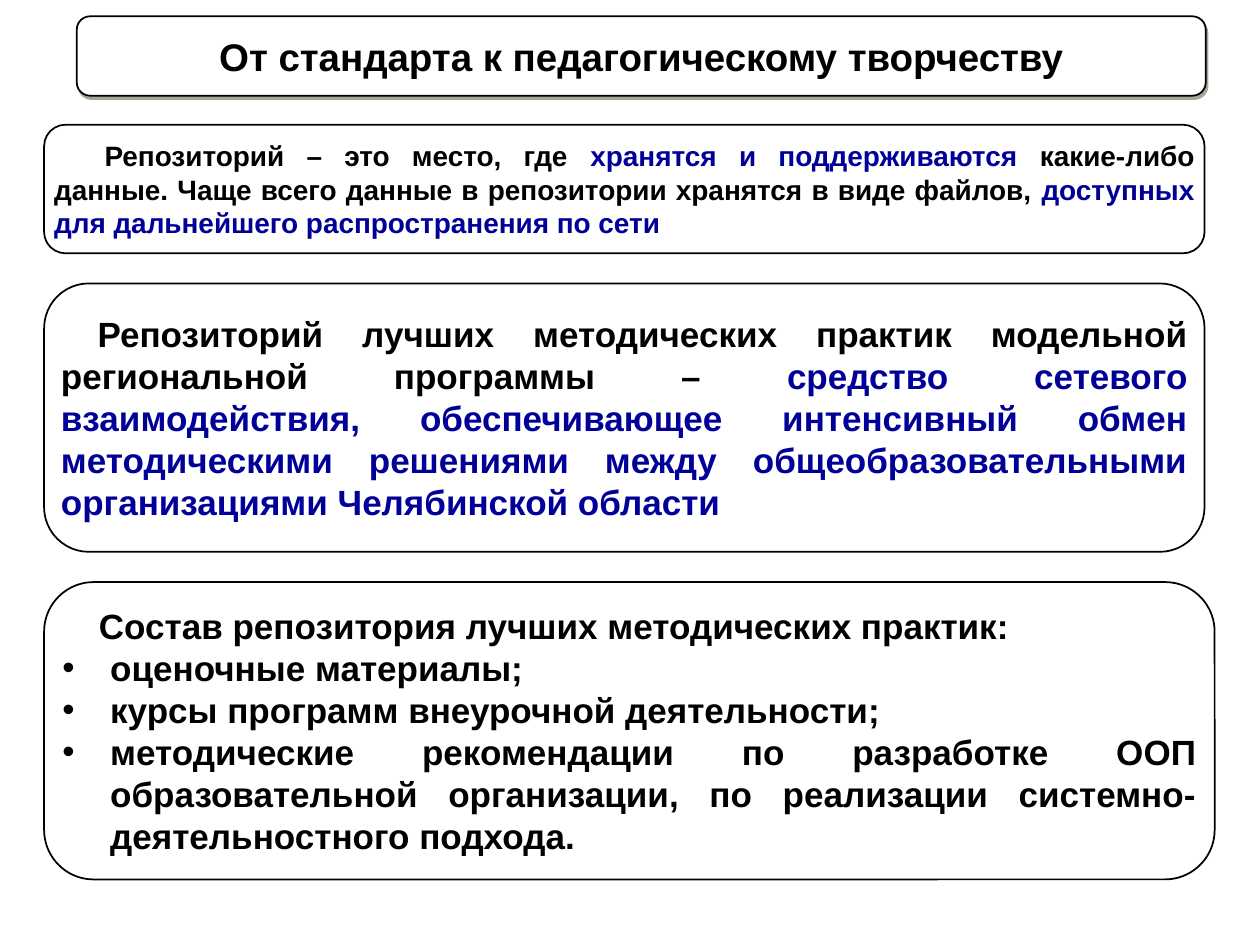
from lxml.etree import SubElement
from pptx import Presentation
from pptx.dml.color import RGBColor
from pptx.enum.shapes import MSO_SHAPE
from pptx.enum.text import MSO_ANCHOR, MSO_AUTO_SIZE, PP_ALIGN
from pptx.oxml import parse_xml
from pptx.oxml.ns import nsdecls, qn
from pptx.util import Inches, Pt

BLACK, BLUE, WHITE = "000000", "000099", "FFFFFF"


def write(shape, paragraphs, size, align=PP_ALIGN.JUSTIFY, inset=0.03):
    """Each paragraph is (left margin, first-line indent, bullet, runs)."""
    tf = shape.text_frame
    tf.word_wrap = True
    tf.auto_size = MSO_AUTO_SIZE.NONE
    tf.vertical_anchor = MSO_ANCHOR.MIDDLE
    tf.margin_left = tf.margin_right = Inches(inset)
    tf.margin_top = tf.margin_bottom = Inches(0.03)
    for i, (margin, indent, bullet, runs) in enumerate(paragraphs):
        p = tf.add_paragraph() if i else tf.paragraphs[0]
        p.alignment = align
        pPr = p._p.get_or_add_pPr()
        pPr.set("marL", str(Inches(margin)))
        pPr.set("indent", str(Inches(indent)))
        if bullet:
            SubElement(pPr, qn("a:buFont"), typeface="Arial")
            SubElement(pPr, qn("a:buChar"), char=bullet)
        for text, color in runs:
            r = p.add_run()
            r.text = text
            r.font.name, r.font.size, r.font.bold = "Arial", Pt(size), True
            r.font.color.rgb = RGBColor.from_string(color)


def add_box(kind, left, top, width, height):
    box = s.shapes.add_shape(kind, Inches(left), Inches(top), Inches(width), Inches(height))
    box.shadow.inherit = False
    box.fill.solid()
    box.fill.fore_color.rgb = RGBColor.from_string(WHITE)
    box.line.color.rgb = RGBColor.from_string(BLACK)
    box.line.width = Pt(1)
    return box


prs = Presentation()
prs.slide_width, prs.slide_height = Inches(10), Inches(7.5)
s = prs.slides.add_slide(prs.slide_layouts[5])

# Title frame with its shadow
frame = add_box(MSO_SHAPE.FLOWCHART_ALTERNATE_PROCESS, 0.61, 0.13, 8.96, 0.63)
frame.shadow.inherit = True
frame.element.spPr.append(parse_xml(
    f'<a:effectLst {nsdecls("a")}>'
    f'<a:outerShdw dist="{Pt(2.2)}" dir="{63 * 60000}" algn="ctr" rotWithShape="0">'
    '<a:srgbClr val="524A37"><a:alpha val="50000"/></a:srgbClr>'
    '</a:outerShdw></a:effectLst>'))

# Title text, in front of its frame
title = s.shapes.title
title.left, title.top, title.width, title.height = frame.left, frame.top, frame.width, frame.height
write(title, [(0, 0, None, [("От стандарта к педагогическому творчеству", BLACK)])],
      22, PP_ALIGN.CENTER, 0)
frame.element.addnext(title.element)

# Text panels: top, width, height, text size, paragraphs
definition = [(0, 0.4, None, [
    ("Репозиторий – это место, где ", BLACK),
    ("хранятся и поддерживаются ", BLUE),
    ("какие-либо данные. Чаще всего данные в репозитории хранятся в виде файлов, ", BLACK),
    ("доступных для дальнейшего распространения по сети", BLUE)])]
purpose = [(0, 0.29, None, [
    ("Репозиторий лучших методических практик модельной региональной программы – ", BLACK),
    ("средство сетевого взаимодействия, обеспечивающее интенсивный обмен методическими "
     "решениями между общеобразовательными организациями Челябинской области", BLUE)])]
contents = [(0, 0.29, None, [("Состав репозитория лучших методических практик:", BLACK)])]
contents += [(0.38, -0.38, "•", [(item, BLACK)]) for item in (
    "оценочные материалы;",
    "курсы программ внеурочной деятельности;",
    "методические рекомендации по разработке ООП образовательной организации, "
    "по реализации системно-деятельностного подхода.")]

for top, width, height, size, paragraphs in (
        (0.99, 9.21, 1.02, 16, definition),
        (2.25, 9.21, 2.13, 20, purpose),
        (4.62, 9.29, 2.36, 20, contents)):
    panel = add_box(MSO_SHAPE.ROUNDED_RECTANGLE, 0.35, top, width, height)
    write(panel, paragraphs, size)

prs.save("out.pptx")
